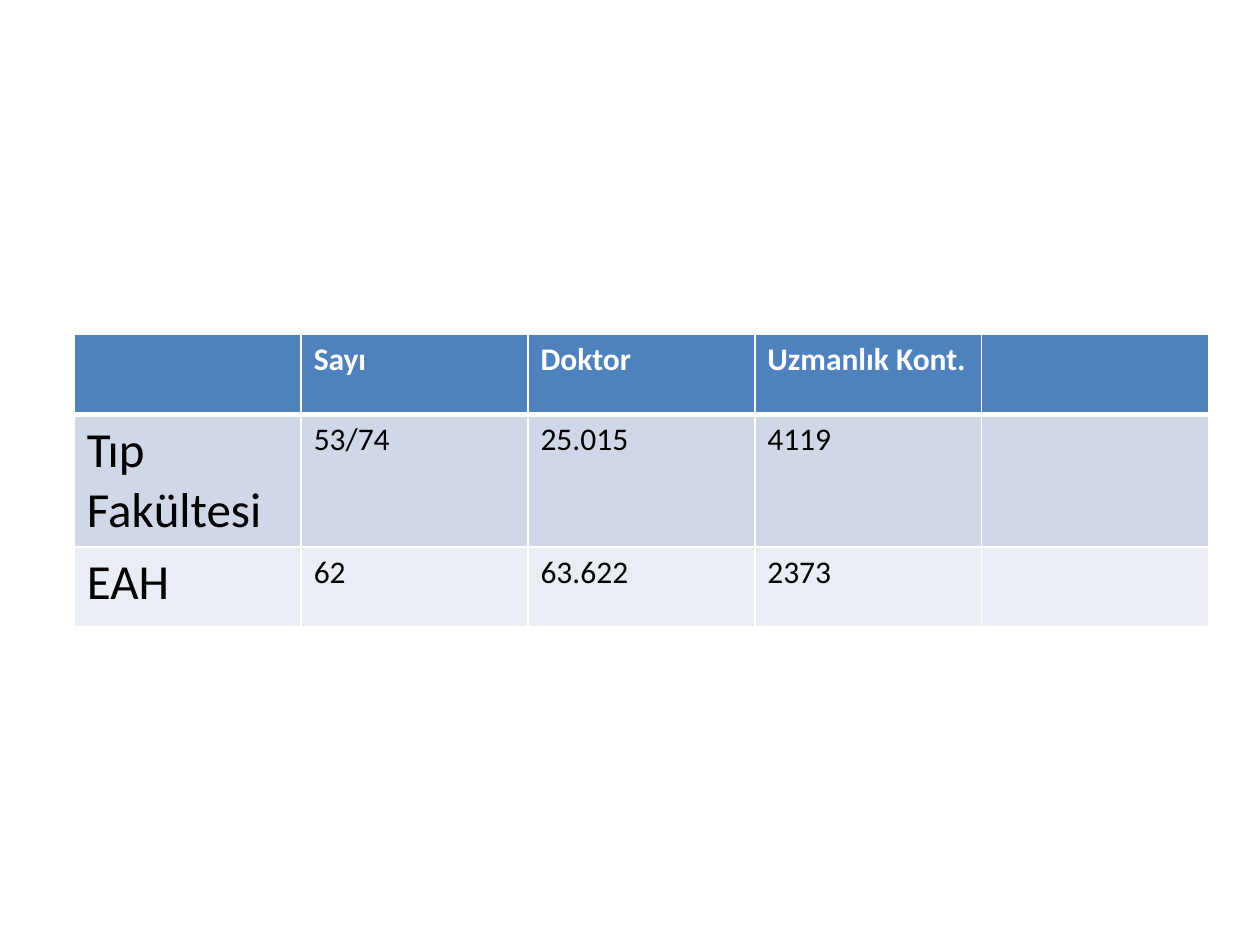
"""Build a slide with a table of doctors by type of institution."""
import lxml.etree
import pptx
import pptx.dml.color
import pptx.oxml.ns
import pptx.util

Pt = pptx.util.Pt
color = pptx.dml.color.RGBColor.from_string

theme = {
    "font": "Calibri",
    "fills": ["4F81BD", "D0D8E8", "E9EDF4"],
    "header_text": "FFFFFF",
    "body_text": "000000",
    "border": "FFFFFF",
    "text_size": 18,
    "label_size": 28,
    "border_width": 1,
    "header_rule": 3,
}

rows = [
    ["", "Sayı", "Doktor", "Uzmanlık Kont.", ""],
    ["Tıp Fakültesi", "53/74", "25.015", "4119", ""],
    ["EAH", "62", "63.622", "2373", ""],
]
left, top, column_width, row_height = 42.5, 190.8, 129.6, 46


def add_border(cell, side, width):
    qn = pptx.oxml.ns.qn
    properties = cell._tc.get_or_add_tcPr()
    line = lxml.etree.SubElement(properties, qn(f"a:ln{side}"), w=str(Pt(width)))
    fill = lxml.etree.SubElement(line, qn("a:solidFill"))
    lxml.etree.SubElement(fill, qn("a:srgbClr"), val=theme["border"])


presentation = pptx.Presentation()
presentation.slide_width = Pt(720)
presentation.slide_height = Pt(540)
slide = presentation.slides.add_slide(presentation.slide_layouts[6])

column_count = len(rows[0])
table = slide.shapes.add_table(
    len(rows), column_count, Pt(left), Pt(top),
    Pt(column_width * column_count), Pt(row_height * len(rows)),
).table
for column in table.columns:
    column.width = Pt(column_width)

for row_index, texts in enumerate(rows):
    table.rows[row_index].height = Pt(row_height)
    is_header = row_index == 0
    widths = dict.fromkeys("LRTB", theme["border_width"])
    if is_header:
        widths["B"] = theme["header_rule"]
    elif row_index == 1:
        widths["T"] = theme["header_rule"]
    for column_index, text in enumerate(texts):
        cell = table.cell(row_index, column_index)
        for side, width in widths.items():
            add_border(cell, side, width)
        cell.fill.solid()
        cell.fill.fore_color.rgb = color(theme["fills"][row_index])
        if not text:
            continue
        cell.text = text
        is_label = column_index == 0
        font = cell.text_frame.paragraphs[0].runs[0].font
        font_format = {
            "name": theme["font"],
            "size": Pt(theme["label_size" if is_label else "text_size"]),
            "bold": is_header,
        }
        for name, value in font_format.items():
            setattr(font, name, value)
        font.color.rgb = color(theme["header_text" if is_header else "body_text"])

presentation.save("out.pptx")
